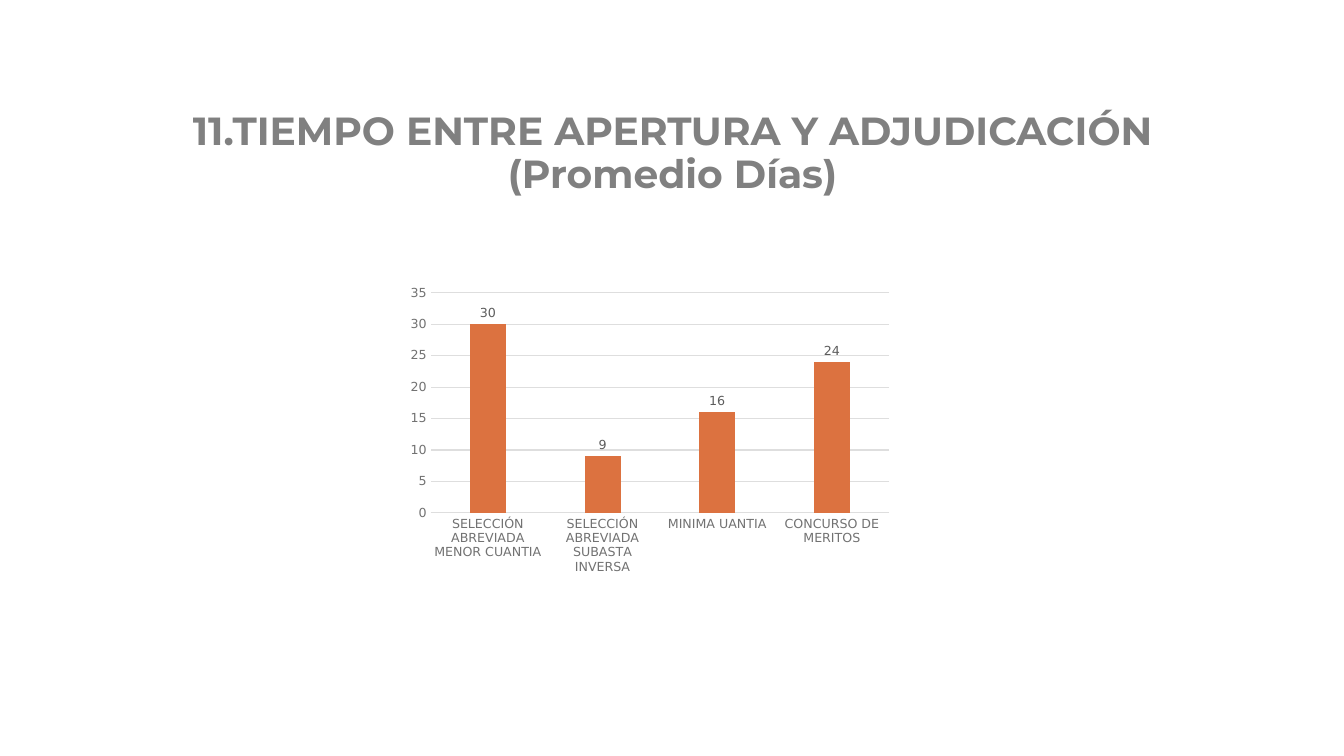
"""Build a slide charting the average days between opening and award."""
from lxml.etree import SubElement
from pptx import Presentation
from pptx.chart.data import CategoryChartData
from pptx.dml.color import RGBColor
from pptx.enum.chart import XL_CHART_TYPE, XL_LABEL_POSITION, XL_TICK_MARK
from pptx.enum.text import MSO_ANCHOR, PP_ALIGN
from pptx.oxml.ns import qn
from pptx.util import Inches, Pt


def style_font(font, face, size, color):
    font.name = face
    font.size = Pt(size)
    font.color.rgb = RGBColor.from_string(color)


def style_line(line, color):
    line.color.rgb = RGBColor.from_string(color)
    line.width = Pt(0.75)


CHART_FACE = "DejaVu Sans"
GRID_COLOR = "DEDEDE"
average_days = {
    "SELECCIÓN ABREVIADA MENOR CUANTIA": 30,
    "SELECCIÓN ABREVIADA SUBASTA INVERSA": 9,
    "MINIMA UANTIA": 16,
    "CONCURSO DE MERITOS": 24,
}

deck = Presentation()
deck.slide_width, deck.slide_height = Inches(13.33), Inches(7.5)
slide = deck.slides.add_slide(deck.slide_layouts[6])

heading = slide.shapes.add_textbox(
    Inches(0.92), Inches(0.99), Inches(11.5), Inches(1.01)).text_frame
heading.word_wrap = True
heading.vertical_anchor = MSO_ANCHOR.BOTTOM
heading_line = heading.paragraphs[0]
heading_line.text = "11.TIEMPO ENTRE APERTURA Y ADJUDICACIÓN (Promedio Días)"
heading_line.alignment = PP_ALIGN.CENTER
heading_line.line_spacing = 0.9
style_font(heading_line.font, "Montserrat", 28, "808080")
heading_line.font.bold = True

days_data = CategoryChartData()
days_data.categories = list(average_days)
days_data.add_series("Series 1", list(average_days.values()))
days_chart = slide.shapes.add_chart(
    XL_CHART_TYPE.COLUMN_CLUSTERED,
    Inches(4.02), Inches(2.7), Inches(5), Inches(3), days_data).chart
days_chart.has_title = False
days_chart.has_legend = False
style_font(days_chart.font, CHART_FACE, 10, "262626")

for axis in (days_chart.category_axis, days_chart.value_axis):
    axis.major_tick_mark = axis.minor_tick_mark = XL_TICK_MARK.NONE
    style_font(axis.tick_labels.font, CHART_FACE, 9, "727272")
style_line(days_chart.category_axis.format.line, GRID_COLOR)

days_axis = days_chart.value_axis
days_axis.minimum_scale, days_axis.maximum_scale, days_axis.major_unit = 0, 35, 5
days_axis.format.line.fill.background()
style_line(days_axis.major_gridlines.format.line, GRID_COLOR)

columns = days_chart.plots[0]
columns.gap_width, columns.overlap = 219, -27
columns.vary_by_categories = False
column_fill = columns.series[0].format.fill
column_fill.solid()
column_fill.fore_color.rgb = RGBColor.from_string("DC7240")

columns.has_data_labels = True
day_labels = columns.data_labels
day_labels.show_value = True
day_labels.position = XL_LABEL_POSITION.OUTSIDE_END
style_font(day_labels.font, CHART_FACE, 9, "5C5C5C")

plot_area = days_chart.element.find(".//" + qn("c:plotArea"))
layout = plot_area.find(qn("c:layout"))
if layout is None:
    layout = SubElement(plot_area, qn("c:layout"))
    plot_area.insert(0, layout)
placement = SubElement(layout, qn("c:manualLayout"))
for setting, value in (
        ("layoutTarget", "inner"), ("xMode", "edge"), ("yMode", "edge"),
        ("x", "0.05"), ("y", "0.07"), ("w", "0.91"), ("h", "0.74")):
    SubElement(placement, qn("c:" + setting)).set("val", value)

deck.save("out.pptx")
